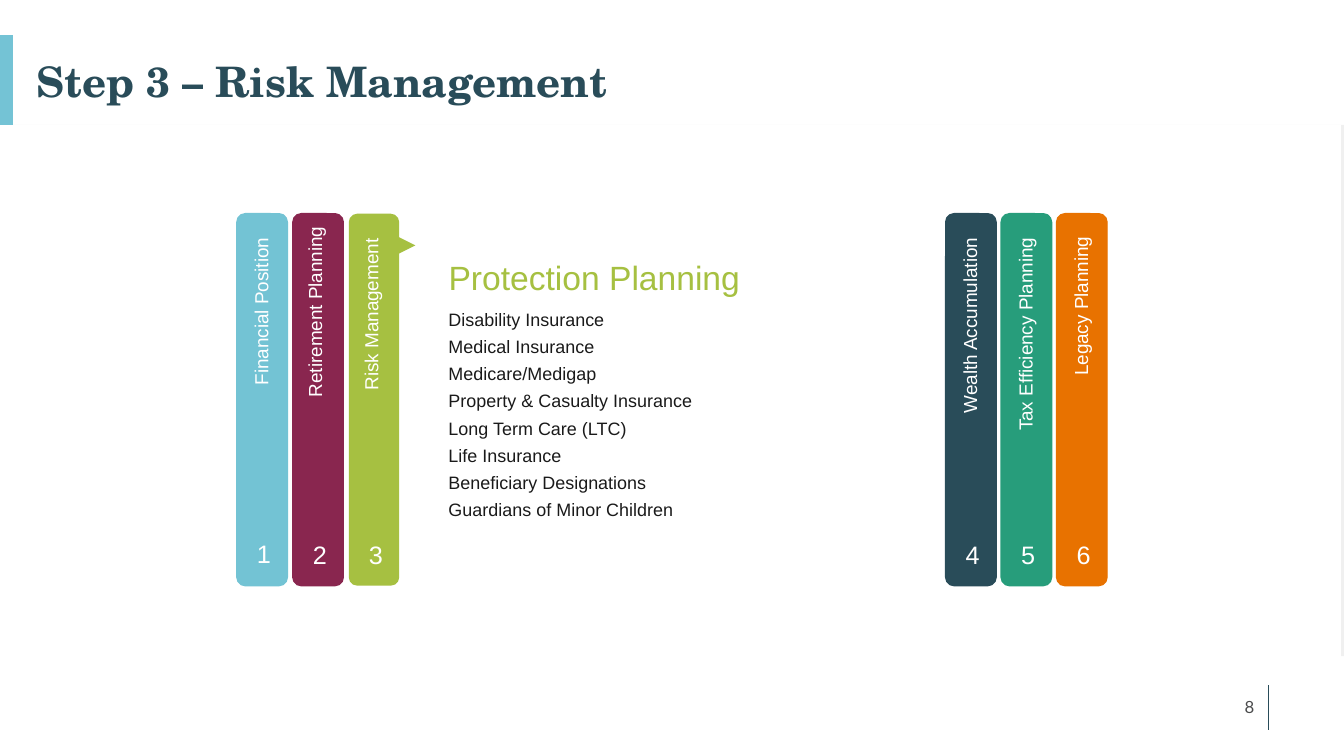
from pptx import Presentation
from pptx.dml.color import RGBColor
from pptx.enum import shapes, text
from pptx.util import Inches, Pt
from lxml import etree

COLORS = {
    "sky": "74C3D5", "aqua": "73C3D4", "plum": "89264F", "lime": "A6C041",
    "navy": "294C59", "green": "279D7B", "orange": "E87200",
    "white": "FFFFFF", "ink": "1A1A1A", "grey": "4B4C4D", "edge": "F0F0F0",
}
TITLE = "Step 3 – Risk Management"
HEADING = "Protection Planning"
TOPICS = [
    "Disability Insurance", "Medical Insurance", "Medicare/Medigap",
    "Property & Casualty Insurance", "Long Term Care (LTC)", "Life Insurance",
    "Beneficiary Designations", "Guardians of Minor Children",
]
PAGE = "8"
# label, colour, label length, label top, label centre from the pillar's left
LEFT_STEPS = [
    ("Financial Position", "aqua", 1.82, 2.26, 0.24),
    ("Retirement Planning", "plum", 2.17, 2.15, 0.22),
    ("Risk Management", "lime", 1.99, 2.27, 0.22),
]
RIGHT_STEPS = [
    ("Wealth Accumulation", "navy", 2.2, 2.26, 0.24),
    ("Tax Efficiency Planning", "green", 2.2, 2.26, 0.24),
    ("Legacy Planning", "orange", 1.75, 2.25, 0.24),
]
# left of first pillar, left of last pillar, steps
PILLAR_GROUPS = [(2.35, 3.46, LEFT_STEPS), (9.38, 10.48, RIGHT_STEPS)]
PILLAR_TOP, PILLAR_WIDTH, PILLAR_HEIGHT = 2.12, 0.5, 3.69
LABEL_HEIGHT = 0.33

prs = Presentation()
prs.slide_width, prs.slide_height = Inches(13.33), Inches(7.5)
slide = prs.slides.add_slide(prs.slide_layouts[5])


def rgb(name):
    return RGBColor.from_string(COLORS[name])


def style(paragraph, size, color, font="Arial", bold=False):
    formats = {"size": Pt(size), "name": font, "bold": bold}
    for key, value in formats.items():
        setattr(paragraph.font, key, value)
    paragraph.font.color.rgb = rgb(color)


def add_block(kind, box, color, outline=None):
    block = slide.shapes.add_shape(kind, *map(Inches, box))
    block.shadow.inherit = False
    block.fill.solid()
    block.fill.fore_color.rgb = rgb(color)
    if outline:
        block.line.color.rgb = rgb(color)
        block.line.width = Pt(outline)
    else:
        block.line.fill.background()
    return block


def fill_text(holder, lines, size, color, font="Arial", wrap=True, align="LEFT"):
    frame = holder.text_frame
    frame.word_wrap = wrap
    frame.vertical_anchor = text.MSO_ANCHOR.TOP
    frame.text = "\n".join(lines)
    for paragraph in frame.paragraphs:
        paragraph.alignment = getattr(text.PP_ALIGN, align)
        style(paragraph, size, color, font)
    return holder


def add_text(box, lines, size, color, **options):
    holder = slide.shapes.add_textbox(*map(Inches, box))
    return fill_text(holder, lines, size, color, **options)


def add_rule(x, top, bottom, color, width):
    rule = slide.shapes.add_connector(
        shapes.MSO_CONNECTOR.STRAIGHT, *map(Inches, (x, bottom, x, top)))
    rule.line.color.rgb = rgb(color)
    rule.line.width = Pt(width)
    etree.SubElement(
        rule._element.spPr,
        "{http://schemas.openxmlformats.org/drawingml/2006/main}effectLst")


def add_pillar(number, left, label, color, length, label_top, centre):
    outlined = color != "lime"
    add_block(shapes.MSO_SHAPE.ROUNDED_RECTANGLE,
              (left, PILLAR_TOP, PILLAR_WIDTH, PILLAR_HEIGHT), color,
              1 if outlined else None)
    number_top = 5.29 if number == 1 else 5.3
    badge = add_block(shapes.MSO_SHAPE.RECTANGLE,
                      (left + 0.1, number_top, 0.34, 0.4), color,
                      0.75 if outlined else None)
    fill_text(badge, [str(number)], 18, "white", wrap=False)
    label_box = (left + centre - length / 2,
                 label_top + length / 2 - LABEL_HEIGHT / 2,
                 length, LABEL_HEIGHT)
    add_text(label_box, [label], 13.5, "white", align="RIGHT").rotation = 270


# Frame of the slide: a grey band under a white panel leaves a thin right edge
add_block(shapes.MSO_SHAPE.RECTANGLE, (0, 1.24, 13.33, 5.27), "edge")
add_rule(0.06, 0.35, 1.24, "sky", 10)
add_rule(12.58, 6.8, 7.24, "navy", 0.75)
add_block(shapes.MSO_SHAPE.RECTANGLE, (-0.03, 1.24, 13.33, 5.32), "white")

# Title
title = slide.shapes.title
title_box = {"left": 0.26, "top": 0.35, "width": 12.77, "height": 0.76}
for side, inches in title_box.items():
    setattr(title, side, Inches(inches))
title.text_frame.text = TITLE
title.text_frame.vertical_anchor = text.MSO_ANCHOR.BOTTOM
title.text_frame.auto_size = text.MSO_AUTO_SIZE.NONE
title_line = title.text_frame.paragraphs[0]
title_line.alignment = text.PP_ALIGN.LEFT
title_line.line_spacing = 0.9
style(title_line, 30, "navy", "TeX Gyre Schola", True)

# Pillars, with a pointer from the current step
pointer = add_block(shapes.MSO_SHAPE.RIGHT_ARROW, (3.68, 2.32, 0.44, 0.23), "lime")
pointer.adjustments[1] = 1.0
number = 0
for first, last, steps in PILLAR_GROUPS:
    pitch = (last - first) / (len(steps) - 1)
    for i, step in enumerate(steps):
        number += 1
        add_pillar(number, first + i * pitch, *step)

# Current step
add_text((4.35, 2.5, 3.75, 0.51), [HEADING], 24, "lime")
topics = add_text((4.35, 2.99, 4.56, 2.38), TOPICS, 12.8, "ink")
for i, topic in enumerate(topics.text_frame.paragraphs):
    topic.line_spacing = 1.1
    topic.space_before = Pt(2.5 if i else 0)

page = add_text((9.54, 6.81, 3, 0.4), [PAGE], 12, "grey", font="Lato", align="RIGHT")
page.text_frame.vertical_anchor = text.MSO_ANCHOR.MIDDLE

prs.save("out.pptx")
